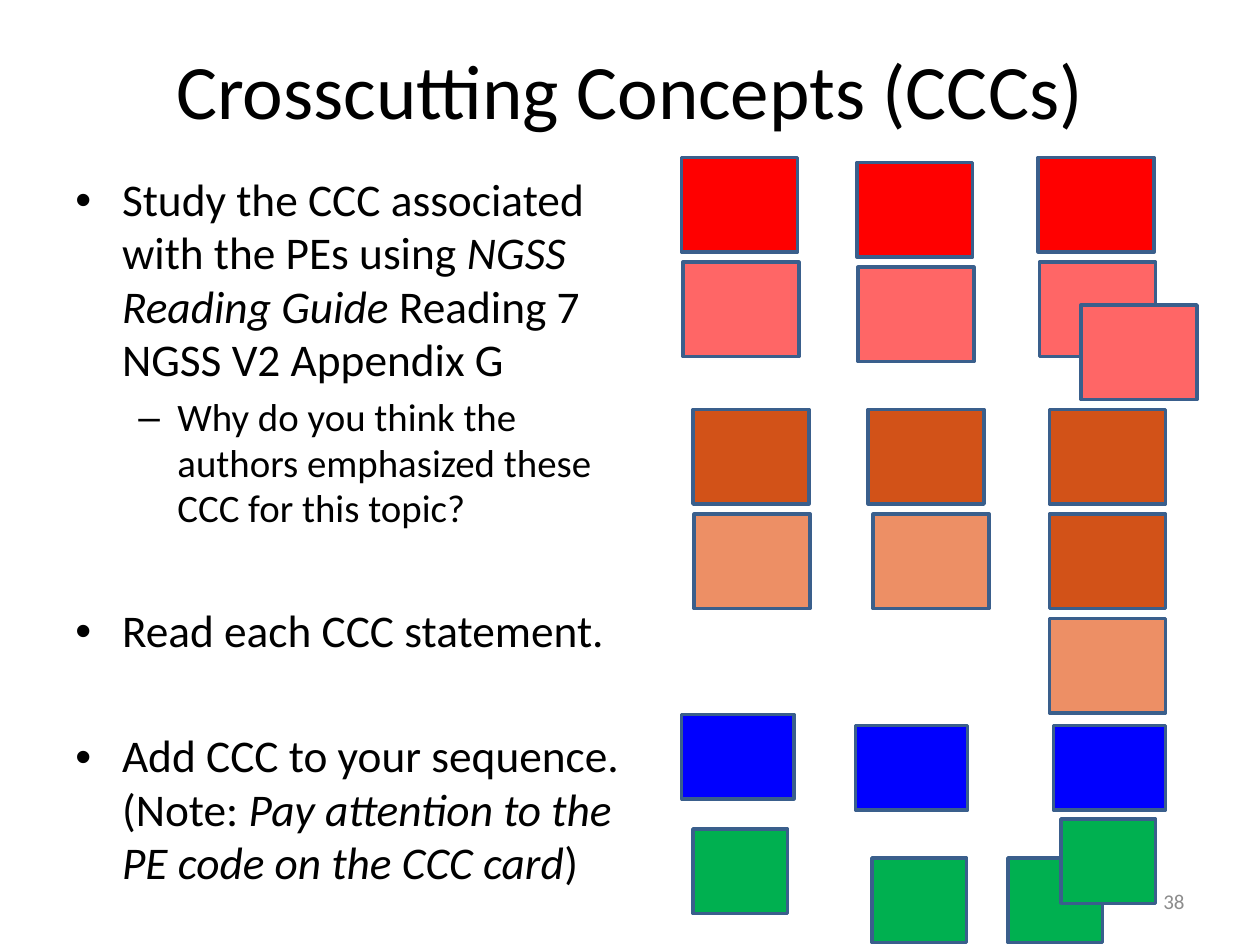
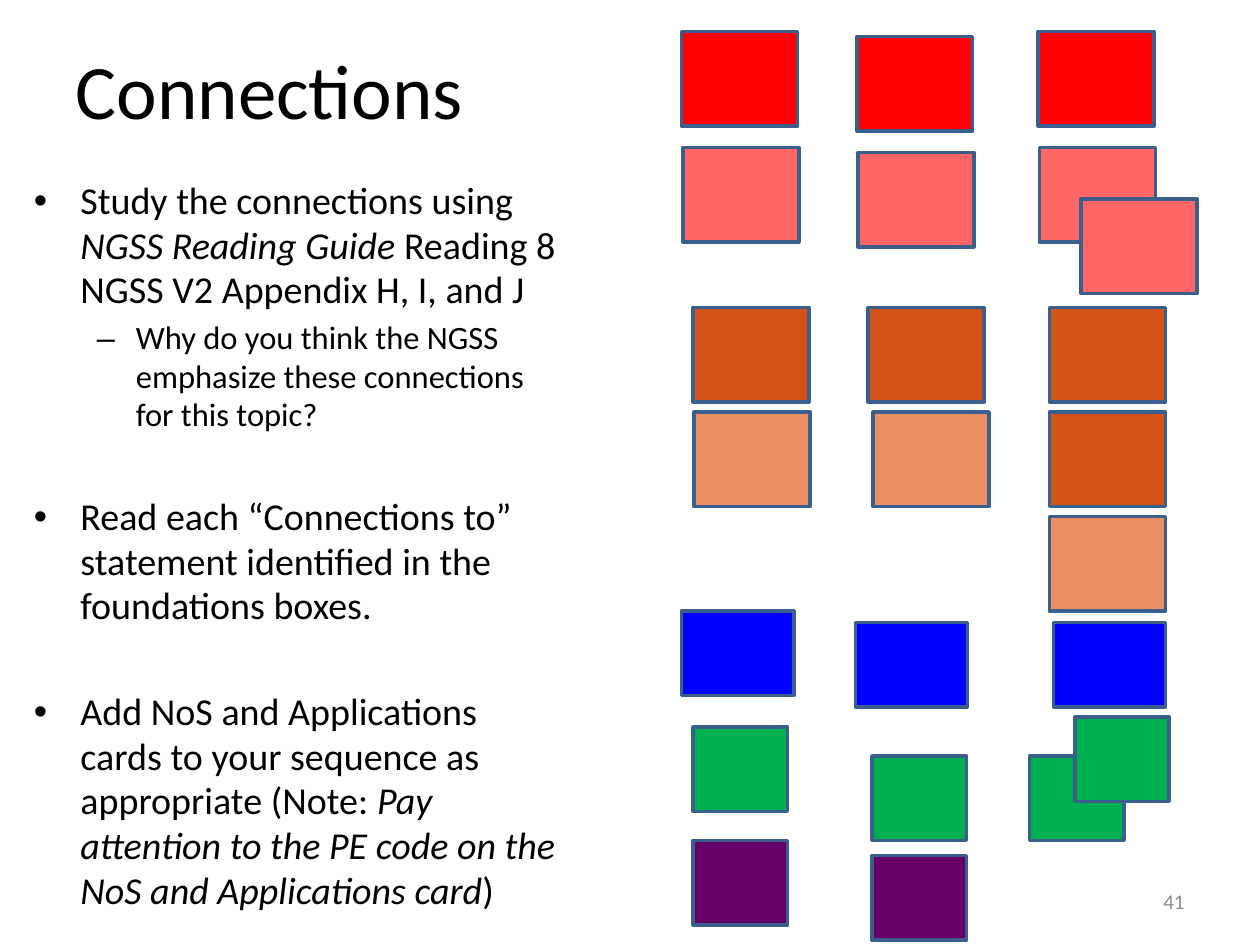
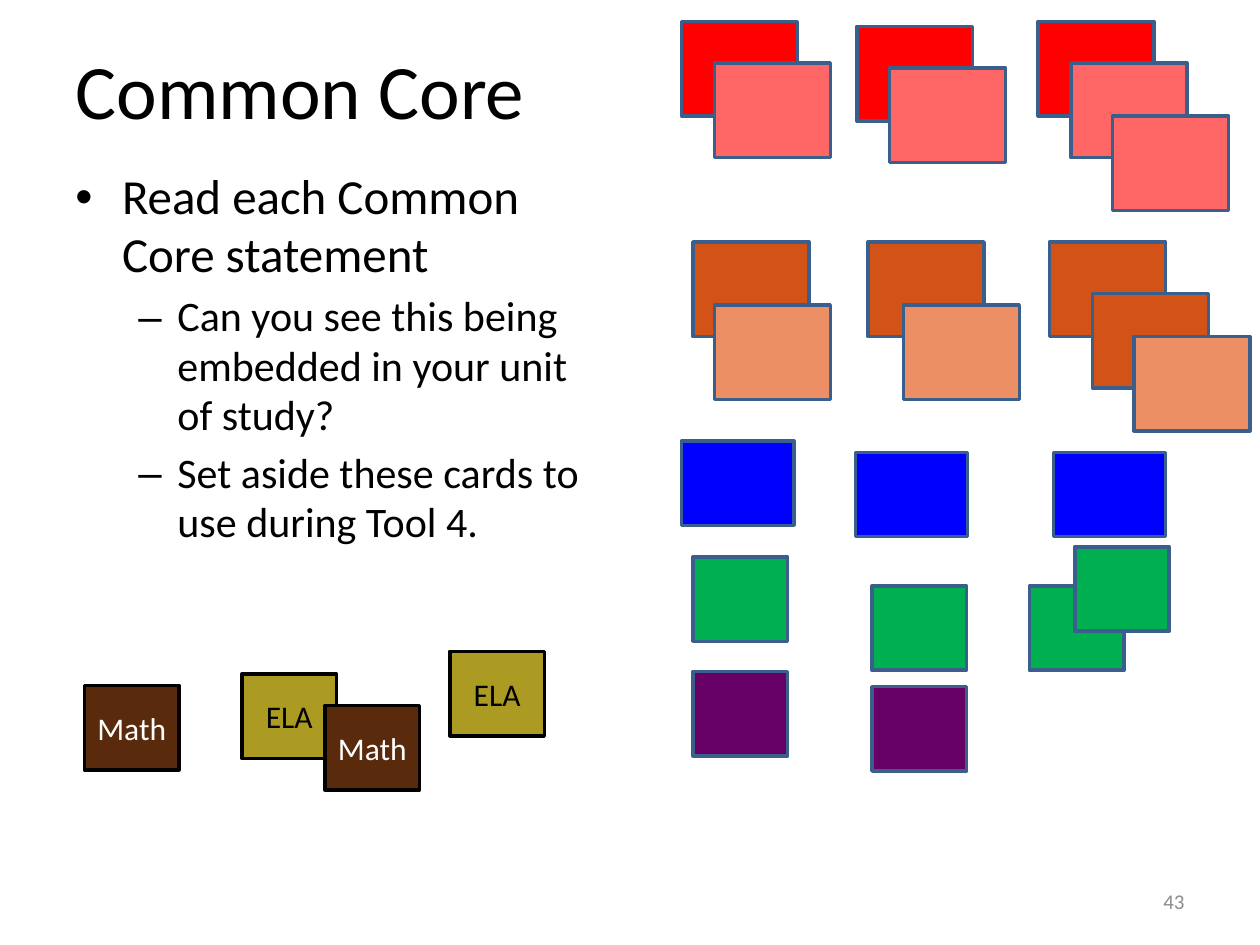
from dataclasses import dataclass

from lxml.etree import SubElement
from pptx import Presentation
from pptx.dml.color import RGBColor
from pptx.enum.shapes import MSO_SHAPE
from pptx.enum.text import MSO_ANCHOR, PP_ALIGN
from pptx.oxml.ns import qn
from pptx.shapes.autoshape import Shape
from pptx.slide import Slide
from pptx.text.text import _Paragraph
from pptx.util import Inches, Pt

FONT = "Calibri"
COLORS = {
    "text": "000000",
    "light_text": "FFFFFF",
    "page_number": "8C8C8C",
    "card_edge": "3A5F8C",
    "label_edge": "000000",
    "red": "FF0000",
    "pink": "FF6666",
    "orange": "D25218",
    "peach": "ED8F65",
    "blue": "0000FF",
    "green": "00B050",
    "purple": "660066",
    "ela": "AC9B22",
    "math": "5A2A0C",
}

# Card sizes in inches
LARGE, MEDIUM, SMALL = (0.92, 0.75), (0.89, 0.67), (0.75, 0.67)
CARD_SIZES = {
    "red": LARGE, "pink": LARGE, "orange": LARGE, "peach": LARGE,
    "blue": MEDIUM, "green": SMALL, "purple": SMALL, "ela": SMALL, "math": SMALL,
}

# Places within a card row: left, and drop below the top of the row
Spots = tuple[tuple[float, float], ...]
RED_SPOTS: Spots = ((5.41, 0), (6.8, 0.04), (8.24, 0))
BLUE_SPOTS: Spots = ((5.41, 0), (6.79, 0.09), (8.36, 0.09))
ORANGE_SPOTS: Spots = ((5.5, 0), (6.89, 0), (8.33, 0))
PEACH_SPOTS: Spots = ((5.51, 0), (6.93, 0), (8.33, 0.83))
GREEN_SPOTS: Spots = ((5.5, 0), (6.92, 0.23), (8.17, 0.23), (8.53, -0.08))
PURPLE_SPOTS: Spots = ((5.5, 0), (6.92, 0.12))


@dataclass(frozen=True)
class CardRow:
    color: str
    top: float
    spots: Spots
    shift: float = 0


@dataclass(frozen=True)
class LabelCard:
    subject: str
    left: float
    top: float
    text_color: str


@dataclass(frozen=True)
class Point:
    """A bulleted paragraph; every second phrase is italic."""
    phrases: tuple[str, ...]
    level: int = 0
    gap_above: bool = False


@dataclass(frozen=True)
class Lesson:
    title: str
    title_align: PP_ALIGN
    number: int
    body_box: tuple[float, float, float, float]
    level_sizes: tuple[float, float]
    points: tuple[Point, ...]
    rows: tuple[CardRow, ...]
    labels: tuple[LabelCard, ...] = ()


LESSONS = (
    Lesson(
        "Crosscutting Concepts (CCCs)", PP_ALIGN.CENTER, 38,
        (0.5, 1.33, 4.58, 5.56), (25.9, 22.2),
        (
            Point(("Study the CCC associated with the PEs using ",
                   "NGSS Reading Guide ", "Reading 7 NGSS V2 Appendix G")),
            Point(("Why do you think the authors emphasized these CCC "
                   "for this topic?",), level=1),
            Point(("Read each CCC statement.",), gap_above=True),
            Point(("Add CCC to your sequence. (Note: ",
                   "Pay attention to the PE code on the CCC card", ")"),
                  gap_above=True),
        ),
        (
            CardRow("green", 6.58,
                    GREEN_SPOTS[:2] + ((8, 0.23), (8.42, -0.08))),
            CardRow("blue", 5.67, BLUE_SPOTS),
            CardRow("orange", 3.25, ORANGE_SPOTS + ((8.33, 0.83),)),
            CardRow("peach", 4.08, PEACH_SPOTS),
            CardRow("red", 1.25, RED_SPOTS),
            CardRow("pink", 2.08, RED_SPOTS + ((8.57, 0.34),), shift=0.01),
        ),
    ),
    Lesson(
        "Connections", PP_ALIGN.LEFT, 41,
        (0.17, 1.37, 4.42, 5.33), (21.7, 18.6),
        (
            Point(("Study the connections using ", "NGSS Reading Guide ",
                   "Reading 8 NGSS V2 Appendix H, I, and J")),
            Point(("Why do you think the NGSS emphasize these connections "
                   "for this topic?",), level=1),
            Point(("Read each “Connections to” statement identified in the "
                   "foundations boxes.",), gap_above=True),
            Point(("Add NoS and Applications cards to your sequence as "
                   "appropriate (Note: ",
                   "Pay attention to the PE code on the NoS and "
                   "Applications card", ")"), gap_above=True),
        ),
        (
            CardRow("purple", 6.67, PURPLE_SPOTS),
            CardRow("green", 5.77, GREEN_SPOTS),
            CardRow("blue", 4.85, BLUE_SPOTS),
            CardRow("orange", 2.44, ORANGE_SPOTS + ((8.33, 0.83),)),
            CardRow("peach", 3.27, PEACH_SPOTS),
            CardRow("red", 0.25, RED_SPOTS),
            CardRow("pink", 1.17, RED_SPOTS + ((8.57, 0.41),), shift=0.01),
        ),
    ),
    Lesson(
        "Common Core", PP_ALIGN.LEFT, 43,
        (0.5, 1.29, 4.21, 5.72), (28, 24),
        (
            Point(("Read each Common Core statement",)),
            Point(("Can you see this being embedded in your unit of study?",),
                  level=1),
            Point(("Set aside these cards to use during Tool 4.",), level=1),
        ),
        (
            CardRow("purple", 5.33, PURPLE_SPOTS),
            CardRow("green", 4.42, GREEN_SPOTS),
            CardRow("blue", 3.5, BLUE_SPOTS),
            CardRow("orange", 1.92, ORANGE_SPOTS + ((8.67, 0.41),)),
            CardRow("peach", 2.42, ((5.67, 0), (7.17, 0), (9, 0.25))),
            CardRow("red", 0.17, RED_SPOTS),
            CardRow("pink", 0.5, RED_SPOTS + ((8.57, 0.42),), shift=0.26),
        ),
        (
            LabelCard("ELA", 1.92, 5.35, "text"),
            LabelCard("Math", 0.67, 5.44, "light_text"),
            LabelCard("Math", 2.58, 5.6, "light_text"),
            LabelCard("ELA", 3.57, 5.17, "text"),
        ),
    ),
)


def rgb(color: str) -> RGBColor:
    return RGBColor.from_string(COLORS[color])


def style(paragraph: _Paragraph, size: float, color: str,
          align: PP_ALIGN) -> None:
    paragraph.alignment = align
    paragraph.font.name = FONT
    paragraph.font.size = Pt(size)
    paragraph.font.color.rgb = rgb(color)


# Title, bulleted text and page number
def add_title(slide: Slide, lesson: Lesson) -> None:
    title = slide.shapes.title
    title.left, title.top = Inches(0.5), Inches(0.08)
    title.width, title.height = Inches(9), Inches(1.25)
    title.text_frame.text = lesson.title
    title.text_frame.vertical_anchor = MSO_ANCHOR.MIDDLE
    style(title.text_frame.paragraphs[0], 44, "text", lesson.title_align)


def set_bullet(paragraph: _Paragraph, level: int) -> None:
    margin, hanging, mark = ((0.37, 0.37, "•"), (0.81, 0.31, "–"))[level]
    properties = paragraph._p.get_or_add_pPr()
    properties.set("marL", str(Inches(margin)))
    properties.set("indent", str(-Inches(hanging)))
    SubElement(properties, qn("a:buFont")).set("typeface", "Arial")
    SubElement(properties, qn("a:buChar")).set("char", mark)


def add_points(slide: Slide, lesson: Lesson) -> None:
    frame = slide.shapes.add_textbox(*map(Inches, lesson.body_box)).text_frame
    frame.word_wrap = True
    for index, point in enumerate(lesson.points):
        paragraph = frame.add_paragraph() if index else frame.paragraphs[0]
        size = lesson.level_sizes[point.level]
        paragraph.level = point.level
        paragraph.line_spacing = 0.98
        paragraph.space_before = Pt(size * (1.6 if point.gap_above else 0.2))
        set_bullet(paragraph, point.level)
        style(paragraph, size, "text", PP_ALIGN.LEFT)
        for position, phrase in enumerate(point.phrases):
            run = paragraph.add_run()
            run.text = phrase
            if position % 2:
                run.font.italic = True


def add_page_number(slide: Slide, number: int) -> None:
    frame = slide.shapes.add_textbox(Inches(7.17), Inches(6.95), Inches(2.33),
                                     Inches(0.4)).text_frame
    frame.word_wrap = True
    frame.vertical_anchor = MSO_ANCHOR.MIDDLE
    frame.text = str(number)
    style(frame.paragraphs[0], 12, "page_number", PP_ALIGN.RIGHT)


# Cards
def add_card(slide: Slide, color: str, left: float, top: float,
             edge: str = "card_edge") -> Shape:
    width, height = CARD_SIZES[color]
    card = slide.shapes.add_shape(MSO_SHAPE.RECTANGLE, Inches(left),
                                  Inches(top), Inches(width), Inches(height))
    card.shadow.inherit = False
    card.fill.solid()
    card.fill.fore_color.rgb = rgb(color)
    card.line.color.rgb = rgb(edge)
    card.line.width = Pt(2)
    return card


def add_card_row(slide: Slide, row: CardRow) -> None:
    for left, drop in row.spots:
        add_card(slide, row.color, left + row.shift, row.top + drop)


def add_label_card(slide: Slide, label: LabelCard) -> None:
    card = add_card(slide, label.subject.lower(), label.left, label.top,
                    "label_edge")
    frame = card.text_frame
    frame.margin_left = frame.margin_right = 0
    frame.vertical_anchor = MSO_ANCHOR.MIDDLE
    frame.text = label.subject
    style(frame.paragraphs[0], 18, label.text_color, PP_ALIGN.CENTER)


def main() -> None:
    deck = Presentation()
    deck.slide_width, deck.slide_height = Inches(10), Inches(7.5)
    title_only = deck.slide_layouts[5]
    for lesson in LESSONS:
        slide = deck.slides.add_slide(title_only)
        add_title(slide, lesson)
        add_points(slide, lesson)
        for label in lesson.labels:
            add_label_card(slide, label)
        for row in lesson.rows:
            add_card_row(slide, row)
        add_page_number(slide, lesson.number)
    deck.save("out.pptx")


if __name__ == "__main__":
    main()
